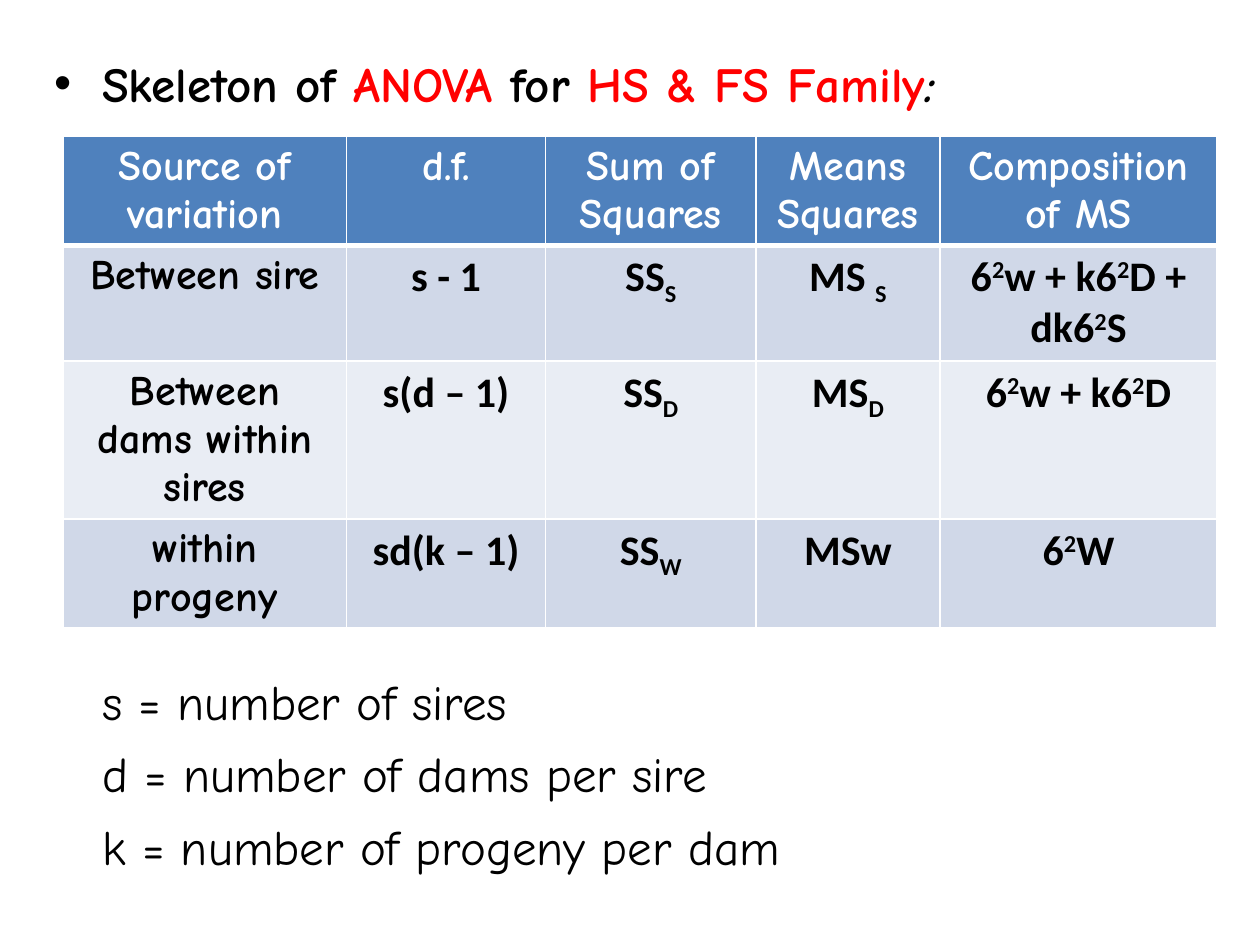
from lxml.etree import SubElement
from pptx import Presentation
from pptx.dml.color import RGBColor
from pptx.enum.text import MSO_ANCHOR, MSO_AUTO_SIZE, PP_ALIGN
from pptx.oxml.ns import qn
from pptx.util import Inches, Pt

COLORS = {
    "text": "000000", "accent": "FF0000", "white": "FFFFFF",
    "header": "4F81BD", "band_dark": "D0D8E8", "band_light": "E9EDF4",
}
SUB, SUP = -25, 30
SQUARED = ("2", SUP)

HEADING = [("Skeleton of ", "text"), ("ANOVA", "accent"), (" for ", "text"),
           ("HS & FS Family", "accent"), (":", "text")]
COL_WIDTHS = [22.5, 15.8, 16.7, 14.6, 22]
ROW_HEIGHTS = [8.6, 9.2, 12.5, 8.6]
# Each cell is a list of (text, baseline shift) runs.
ANOVA = [
    [[(name, 0)] for name in ("Source of variation", "d.f.", "Sum of Squares",
                              "Means Squares", "Composition of MS")],
    [[("Between sire", 0)], [("s - 1", 0)],
     [("SS", 0), ("S", SUB)], [("MS ", 0), ("S", SUB)],
     [("6", 0), SQUARED, ("w + k6", 0), SQUARED, ("D + dk6", 0), SQUARED, ("S", 0)]],
    [[("Between dams within sires", 0)], [("s(d – 1)", 0)],
     [("SS", 0), ("D", SUB)], [("MS", 0), ("D", SUB)],
     [("6", 0), SQUARED, ("w + k6", 0), SQUARED, ("D", 0)]],
    [[("within progeny", 0)], [("sd(k – 1)", 0)],
     [("SS", 0), ("W", SUB)], [("MSw", 0)],
     [("6", 0), SQUARED, ("W", 0)]],
]
LEGEND = ["s = number of sires", "d = number of dams per sire",
          "k = number of progeny per dam"]


class SlideBuilder:
    """Places elements on a grid of 100 columns by 75 rows."""
    HAND, PLAIN = "Comic Neue", "Calibri"
    TEXT_SIZE, TABLE_SIZE = 28, 24
    HANG = 3.8

    def __init__(self, prs):
        self.col = prs.slide_width / 100
        self.row = prs.slide_height / 75
        self.s = prs.slides.add_slide(prs.slide_layouts[1])

    def box(self, x, y, w, h):
        return (round(x * self.col), round(y * self.row),
                round(w * self.col), round(h * self.row))

    def run(self, p, text, size, color="text", font=HAND, bold=False):
        r = p.add_run()
        r.text = text
        r.font.name, r.font.size, r.font.bold = font, Pt(size), bold
        r.font.color.rgb = RGBColor.from_string(COLORS[color])
        return r

    def place(self, sp, anchor, *box):
        sp.left, sp.top, sp.width, sp.height = self.box(*box)
        tf = sp.text_frame
        tf.word_wrap = True
        tf.auto_size = MSO_AUTO_SIZE.NONE
        tf.vertical_anchor = anchor
        return tf

    def indent(self, p, first, bullet=None):
        pPr = p._p.get_or_add_pPr()
        pPr.set("marL", str(round(self.HANG * self.col)))
        pPr.set("indent", str(round(first * self.col)))
        if bullet:
            SubElement(pPr, qn("a:buFont"), typeface="Arial")
            SubElement(pPr, qn("a:buChar"), char=bullet)
        else:
            SubElement(pPr, qn("a:buNone"))

    def title(self, runs, *box):
        p = self.place(self.s.shapes.title, MSO_ANCHOR.MIDDLE, *box).paragraphs[0]
        self.indent(p, -self.HANG, "•")
        p.alignment = PP_ALIGN.LEFT
        for text, color in runs:
            r = self.run(p, text, self.TEXT_SIZE, color, bold=True)
        r.font.italic = True  # closing colon

    def legend(self, lines, *box):
        tf = self.place(self.s.placeholders[1], MSO_ANCHOR.TOP, *box)
        for i, line in enumerate(lines):
            p = tf.add_paragraph() if i else tf.paragraphs[0]
            self.indent(p, 0)
            p.space_before = Pt(7.7 if i else 0)
            self.run(p, line, self.TEXT_SIZE)

    def borders(self, cell, top, bottom):
        tcPr = cell._tc.get_or_add_tcPr()
        for side, width in (("L", 1), ("R", 1), ("T", top), ("B", bottom)):
            ln = SubElement(tcPr, qn(f"a:ln{side}"), w=str(Pt(width)))
            fill = SubElement(ln, qn("a:solidFill"))
            SubElement(fill, qn("a:srgbClr"), val=COLORS["white"])

    def table(self, rows, widths, heights, x, y):
        frame = self.s.shapes.add_table(len(rows), len(widths),
                                        *self.box(x, y, sum(widths), sum(heights)))
        tbl = frame.table
        for column, width in zip(tbl.columns, widths):
            column.width = round(width * self.col)
        for i, cells in enumerate(rows):
            tbl.rows[i].height = round(heights[i] * self.row)
            band = "header" if i == 0 else "band_dark" if i % 2 else "band_light"
            for j, runs in enumerate(cells):
                cell = tbl.cell(i, j)
                self.borders(cell, top=3 if i == 1 else 1, bottom=3 if i == 0 else 1)
                cell.fill.solid()
                cell.fill.fore_color.rgb = RGBColor.from_string(COLORS[band])
                p = cell.text_frame.paragraphs[0]
                p.alignment = PP_ALIGN.CENTER
                font = self.PLAIN if i and j else self.HAND
                for text, shift in runs:
                    r = self.run(p, text, self.TABLE_SIZE,
                                 "text" if i else "white", font, bold=True)
                    if shift:
                        r.font._element.set("baseline", str(shift * 1000))


def main():
    prs = Presentation()
    prs.slide_width, prs.slide_height = Inches(10), Inches(7.5)
    slide = SlideBuilder(prs)
    slide.title(HEADING, 3.3, 3.8, 94.2, 5.5)
    slide.table(ANOVA, COL_WIDTHS, ROW_HEIGHTS, 5, 10.8)
    slide.legend(LEGEND, 3.3, 52.8, 94.2, 19.7)
    prs.save("out.pptx")


if __name__ == "__main__":
    main()
